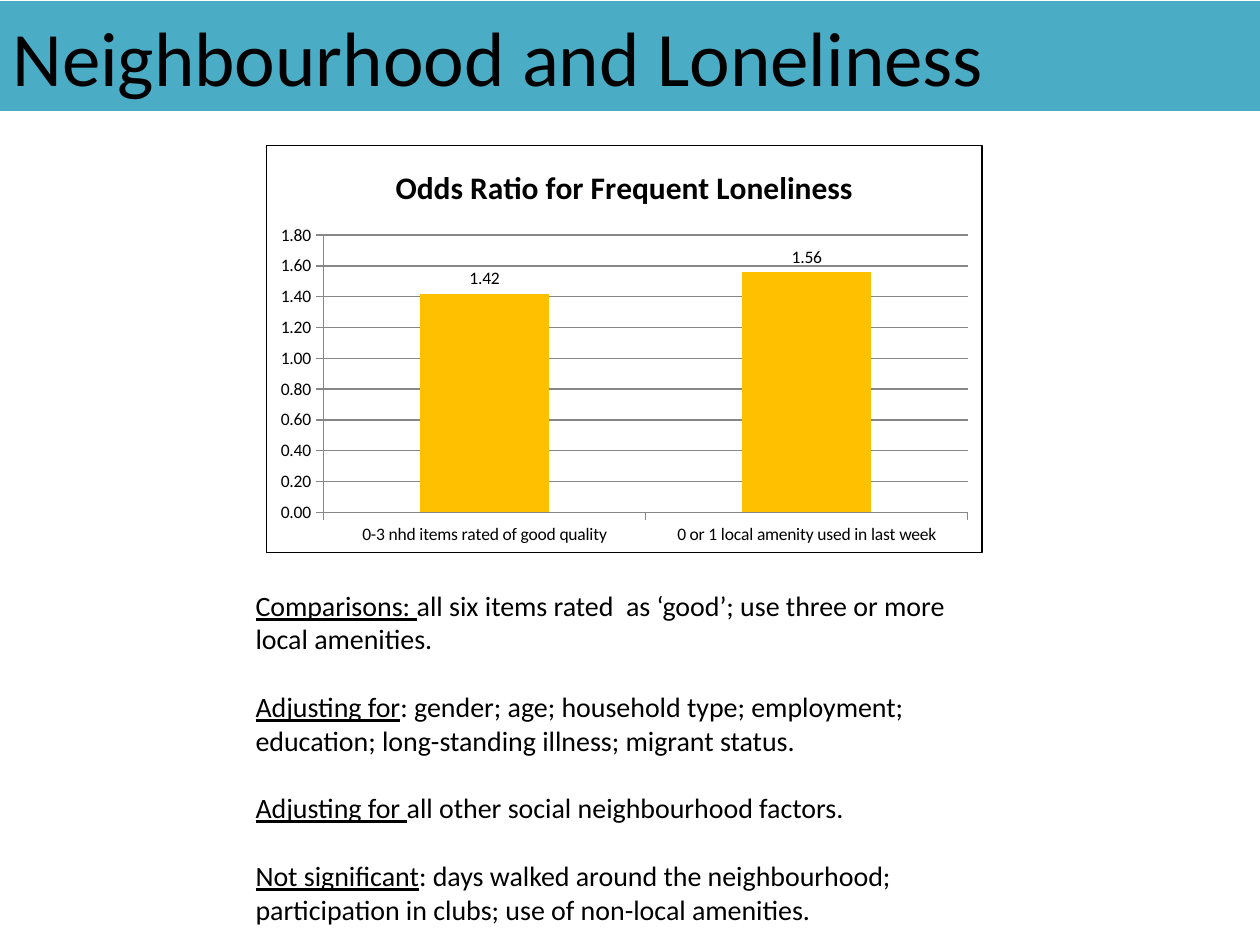
from lxml import etree
from pptx import Presentation
from pptx.chart.data import CategoryChartData
from pptx.dml.color import RGBColor
from pptx.enum import chart as charts, shapes, text
from pptx.oxml import parse_xml
from pptx.oxml.ns import qn
from pptx.util import Inches, Pt

TEAL = RGBColor(0x4B, 0xAC, 0xC6)
AMBER = RGBColor(0xFF, 0xC0, 0x00)
BLACK = RGBColor(0, 0, 0)
GREY = RGBColor(0x87, 0x87, 0x87)
FONT = "Calibri"

NOTES = [
    ("Comparisons: ", "all six items rated  as ‘good’; use three or more local amenities."),
    ("Adjusting for", ": gender; age; household type; employment; education; "
                      "long-standing illness; migrant status."),
    ("Adjusting for ", "all other social neighbourhood factors."),
    ("Not significant", ": days walked around the neighbourhood; participation in clubs; "
                        "use of non-local amenities."),
]
ODDS_RATIOS = {
    "0-3 nhd items rated of good quality": 1.42,
    "0 or 1 local amenity used in last week": 1.56,
}


def style_font(font, size, bold=False):
    """Give a font the slide's typeface and colour."""
    font.name = FONT
    font.size = Pt(size)
    font.bold = bold
    font.color.rgb = BLACK


def add_run(paragraph, words, size, underline=False):
    """Append one styled run to a paragraph."""
    run = paragraph.add_run()
    run.text = words
    style_font(run.font, size)
    run.font.underline = underline


def add_title_band(slide, left, top, width, height):
    """Place the coloured title band."""
    band = slide.shapes.add_shape(shapes.MSO_SHAPE.RECTANGLE, left, top, width, height)
    band.shadow.inherit = False
    band.fill.solid()
    band.fill.fore_color.rgb = TEAL
    band.line.fill.background()
    band.text_frame.vertical_anchor = text.MSO_ANCHOR.MIDDLE
    paragraph = band.text_frame.paragraphs[0]
    paragraph.alignment = text.PP_ALIGN.LEFT
    add_run(paragraph, "Neighbourhood and Loneliness", 44)


def add_chart_border(chart):
    """Outline the whole chart with a thin black line."""
    border = parse_xml(
        '<c:spPr xmlns:c="http://schemas.openxmlformats.org/drawingml/2006/chart"'
        ' xmlns:a="http://schemas.openxmlformats.org/drawingml/2006/main">'
        f'<a:noFill/><a:ln w="{Pt(0.75)}"><a:solidFill><a:srgbClr val="{BLACK}"/>'
        '</a:solidFill></a:ln></c:spPr>'
    )
    chart.element.find(qn("c:chart")).addnext(border)


def add_odds_chart(slide, left, top, width, height):
    """Place the odds ratio column chart."""
    data = CategoryChartData()
    data.categories = list(ODDS_RATIOS)
    data.add_series("Series 1", list(ODDS_RATIOS.values()))
    chart = slide.shapes.add_chart(
        charts.XL_CHART_TYPE.COLUMN_CLUSTERED, left, top, width, height, data
    ).chart
    style_font(chart.font, 10)
    chart.has_legend = False
    chart.has_title = True
    run = chart.chart_title.text_frame.paragraphs[0].add_run()
    run.text = "Odds Ratio for Frequent Loneliness"
    style_font(run.font, 18, bold=True)
    chart.chart_title.include_in_layout = False

    for axis in (chart.category_axis, chart.value_axis):
        axis.major_tick_mark = charts.XL_TICK_MARK.OUTSIDE
        axis.minor_tick_mark = charts.XL_TICK_MARK.NONE
        axis.format.line.color.rgb = GREY
    value_axis = chart.value_axis
    value_axis.minimum_scale = 0
    value_axis.has_major_gridlines = True
    value_axis.major_gridlines.format.line.color.rgb = GREY
    value_axis.tick_labels.number_format = "#,##0.00"
    value_axis.tick_labels.number_format_is_linked = False

    plot = chart.plots[0]
    plot.gap_width = 150
    plot.vary_by_categories = False
    series = plot.series[0]
    series.format.fill.solid()
    series.format.fill.fore_color.rgb = AMBER
    series.data_labels.show_value = True
    series.data_labels.position = charts.XL_LABEL_POSITION.OUTSIDE_END
    add_chart_border(chart)


def add_notes_text(slide, left, top, width, height):
    """Place the explanatory paragraphs, each led by an underlined phrase."""
    frame = slide.shapes.add_textbox(left, top, width, height).text_frame
    frame.word_wrap = True
    for index, (lead, detail) in enumerate(NOTES):
        paragraph = frame.add_paragraph() if index else frame.paragraphs[0]
        if index:
            paragraph.space_before = Pt(19.5)
        add_run(paragraph, lead, 16, underline=True)
        add_run(paragraph, detail, 16)


def main():
    """Build and save the slide."""
    presentation = Presentation()
    presentation.slide_width = Inches(10)
    presentation.slide_height = Inches(7.5)
    slide = presentation.slides.add_slide(presentation.slide_layouts[6])
    add_notes_text(slide, Inches(1.93), Inches(4.62), Inches(6.06), Inches(3.06))
    add_title_band(slide, Inches(0), Inches(0.01), Inches(10), Inches(0.87))
    add_odds_chart(slide, Inches(2.11), Inches(1.15), Inches(5.69), Inches(3.24))
    presentation.save("out.pptx")


if __name__ == "__main__":
    main()
